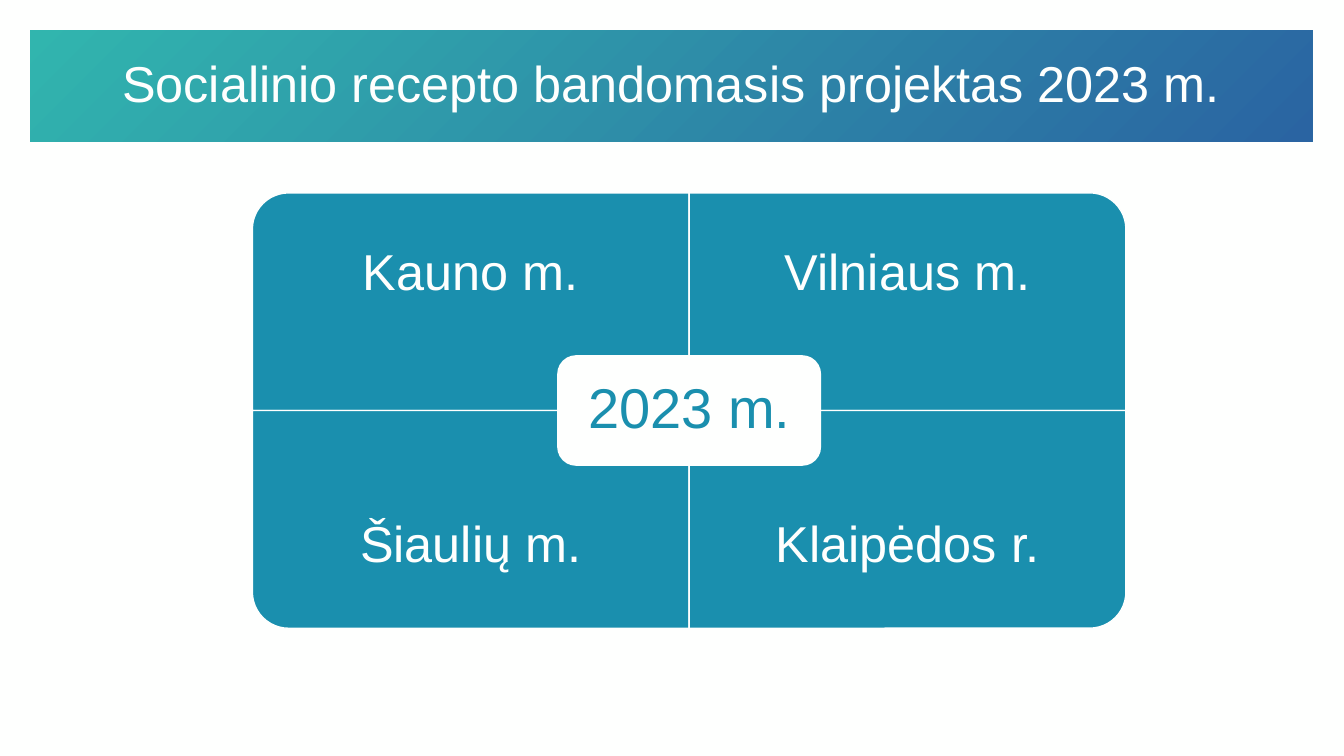
from pptx import Presentation
from pptx.dml.color import RGBColor as RGB
from pptx.enum.shapes import MSO_SHAPE as Shape
from pptx.enum.text import MSO_ANCHOR as Anchor, PP_ALIGN as Align
from pptx.util import Pt

TITLE = "Socialinio recepto bandomasis projektas 2023 m."
CENTER = "2023 m."
CITIES = [
    ("Kauno m.", 0, 0, 270),
    ("Vilniaus m.", 0, 1, 0),
    ("Šiaulių m.", 1, 0, 180),
    ("Klaipėdos r.", 1, 1, 90),
]
COLORS = {"white": "FEFFFE", "teal": "1A8FAE", "start": "31B5AE", "end": "2A64A2"}
FONT = "Arial"
LEFT, TOP, WIDE, HIGH = 180.25, 137.75, 312, 155.5
MID_W, MID_H = 187.5, 78


def color(name):
    return RGB.from_string(COLORS[name])


def add_box(shapes, kind, x, y, w, h, fill):
    box = shapes.add_shape(kind, Pt(x), Pt(y), Pt(w), Pt(h))
    box.shadow.inherit = False
    box.fill.solid()
    box.fill.fore_color.rgb = color(fill)
    box.line.color.rgb = color("white")
    box.line.width = Pt(1)
    return box


def write(box, text, size, ink, inset):
    frame = box.text_frame
    frame.word_wrap = True
    frame.vertical_anchor = Anchor.MIDDLE
    frame.margin_left = frame.margin_right = Pt(inset)
    frame.margin_top = frame.margin_bottom = Pt(inset)
    para = frame.paragraphs[0]
    para.text = text
    para.alignment = Align.CENTER
    para.line_spacing = 0.9
    para.font.name = FONT
    para.font.size = Pt(size)
    para.font.color.rgb = color(ink)


def add_title(shapes):
    bar = add_box(shapes, Shape.RECTANGLE, 21.5, 21.5, 916, 79.5, "start")
    bar.line.fill.background()
    bar.fill.gradient()
    bar.fill.gradient_angle = 315
    for stop, name, place in zip(bar.fill.gradient_stops, ("start", "end"), (0, 1)):
        stop.color.rgb = color(name)
        stop.position = place
    write(bar, TITLE, 36, "white", 4)


def add_city(shapes, name, row, col, turn):
    x, y = LEFT + col * WIDE, TOP + row * HIGH
    w, h = (HIGH, WIDE) if turn % 180 else (WIDE, HIGH)
    tile = add_box(shapes, Shape.ROUND_1_RECTANGLE,
                   x + (WIDE - w) / 2, y + (HIGH - h) / 2, w, h, "teal")
    tile.rotation = turn
    label = shapes.add_textbox(Pt(x), Pt(y + row * HIGH / 4), Pt(WIDE), Pt(HIGH * 0.75))
    write(label, name, 36, "white", 20)


def main():
    deck = Presentation()
    deck.slide_width, deck.slide_height = Pt(960), Pt(540)
    slide = deck.slides.add_slide(deck.slide_layouts[6])
    slide.background.fill.solid()
    slide.background.fill.fore_color.rgb = color("white")
    add_title(slide.shapes)
    matrix = slide.shapes.add_group_shape().shapes
    for city in CITIES:
        add_city(matrix, *city)
    hub = add_box(matrix, Shape.ROUNDED_RECTANGLE, LEFT + WIDE - MID_W / 2,
                  TOP + HIGH - MID_H / 2, MID_W, MID_H, "white")
    write(hub, CENTER, 40, "teal", 12)
    deck.save("out.pptx")


if __name__ == "__main__":
    main()
